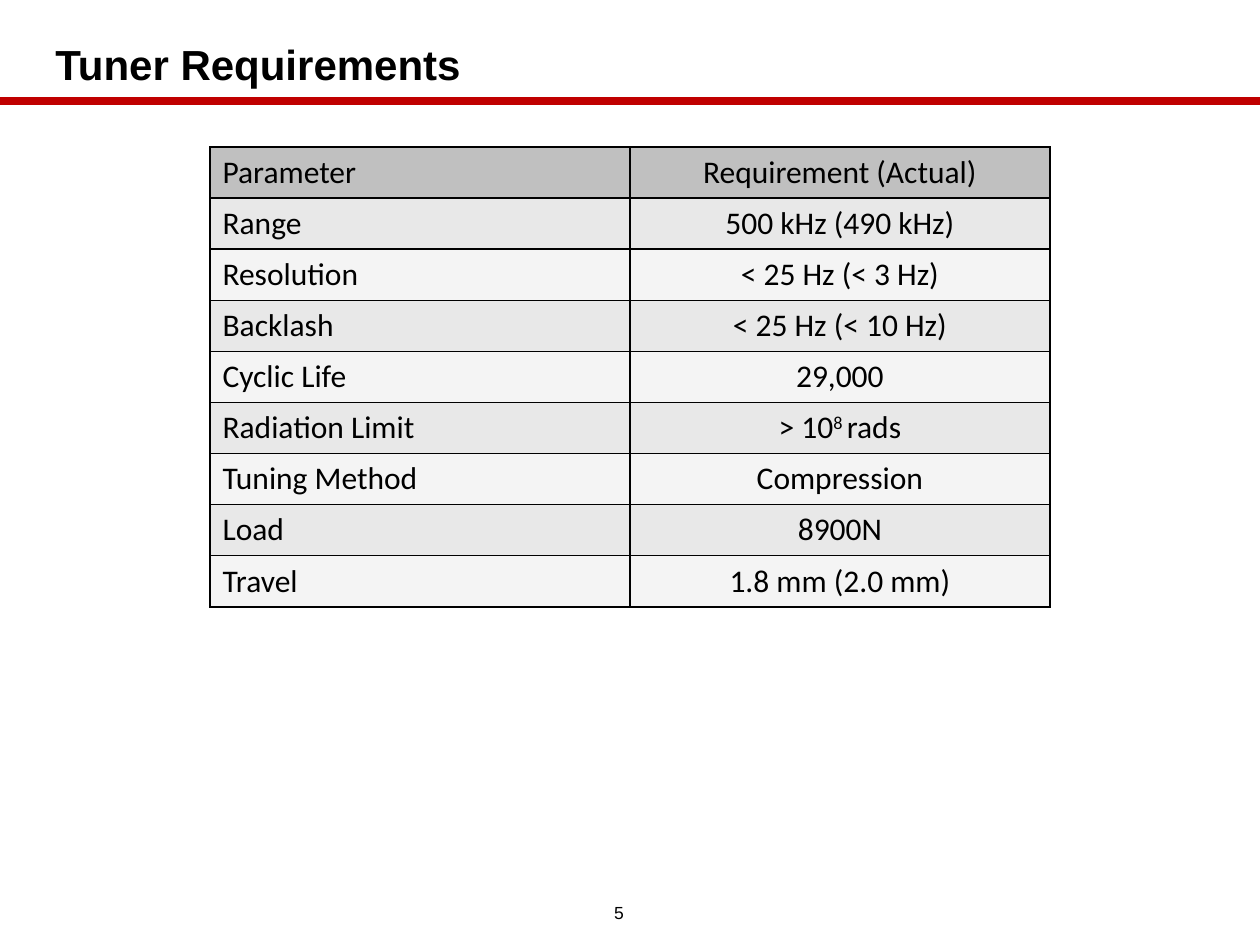
from lxml.etree import SubElement
from pptx import Presentation
from pptx.dml.color import RGBColor
from pptx.enum.shapes import MSO_CONNECTOR
from pptx.enum.text import MSO_ANCHOR, PP_ALIGN
from pptx.oxml.ns import qn
from pptx.util import Emu, Pt

PX = 914400 / 126
WIDTH, HEIGHT = 1260, 945
BLACK, RED = "000000", "C00000"
HEADER_FILL, BAND_FILLS = "C0C0C0", ("E8E8E8", "F4F4F4")
# A caret switches superscript on and off.
ROWS = [
    ("Parameter", "Requirement (Actual)"),
    ("Range", "500 kHz (490 kHz)"),
    ("Resolution", "< 25 Hz (< 3 Hz)"),
    ("Backlash", "< 25 Hz (< 10 Hz)"),
    ("Cyclic Life", "29,000"),
    ("Radiation Limit", "> 10^8 ^rads"),
    ("Tuning Method", "Compression"),
    ("Load", "8900N"),
    ("Travel", "1.8 mm (2.0 mm)"),
]


def px(n):
    return Emu(round(n * PX))


def rgb(value):
    return RGBColor.from_string(value)


def set_font(font, name, size, bold=False):
    font.name, font.size, font.bold = name, Pt(size), bold
    font.color.rgb = rgb(BLACK)


def add_label(s, box, text, size, align=PP_ALIGN.LEFT, bold=False):
    tf = s.shapes.add_textbox(*map(px, box)).text_frame
    tf.word_wrap = True
    tf.vertical_anchor = MSO_ANCHOR.MIDDLE
    tf.text = text
    p = tf.paragraphs[0]
    p.alignment = align
    set_font(p.runs[0].font, "Arial", size, bold)
    return p


def add_header(s, x, y, w, h):
    """Title with a red rule across the slide below it."""
    rule_y = y + h + 1
    rule = s.shapes.add_connector(
        MSO_CONNECTOR.STRAIGHT, px(0), px(rule_y), px(WIDTH), px(rule_y))
    rule.line.color.rgb = rgb(RED)
    rule.line.width = Pt(4.5)
    SubElement(rule._element.spPr, qn("a:effectLst"))
    title = add_label(s, (x, y, w, h), "Tuner Requirements", 24, bold=True)
    title.line_spacing = 0.9


def add_borders(cell):
    """Black 1 pt lines on all sides; they must precede the cell fill."""
    tcPr = cell._tc.get_or_add_tcPr()
    for side in ("a:lnL", "a:lnR", "a:lnT", "a:lnB"):
        ln = SubElement(tcPr, qn(side), w=str(Pt(1)))
        fill = SubElement(ln, qn("a:solidFill"))
        SubElement(fill, qn("a:srgbClr"), val=BLACK)


def fill_cell(cell, text, fill, align):
    add_borders(cell)
    cell.fill.solid()
    cell.fill.fore_color.rgb = rgb(fill)
    p = cell.text_frame.paragraphs[0]
    p.alignment = align
    for i, part in enumerate(text.split("^")):
        r = p.add_run()
        r.text = part
        set_font(r.font, "Calibri", 18)
        if i % 2:
            r._r.get_or_add_rPr().set("baseline", "30000")


def add_requirements(s, x, y, w, h):
    table = s.shapes.add_table(
        len(ROWS), 2, px(x), px(y), px(w), px(h)).table
    for column in table.columns:
        column.width = px(w / 2)
    for i, row in enumerate(ROWS):
        table.rows[i].height = px(h / len(ROWS))
        fill = BAND_FILLS[(i - 1) % 2] if i else HEADER_FILL
        for j, align in enumerate((PP_ALIGN.LEFT, PP_ALIGN.CENTER)):
            fill_cell(table.cell(i, j), row[j], fill, align)


def main():
    prs = Presentation()
    prs.slide_width, prs.slide_height = px(WIDTH), px(HEIGHT)
    s = prs.slides.add_slide(prs.slide_layouts[6])
    add_header(s, 43, 33, 1167, 67)
    add_requirements(s, 210, 147, 840, 460)
    add_label(s, (582, 891, 74, 42), "5", 10, PP_ALIGN.CENTER)
    prs.save("out.pptx")


if __name__ == "__main__":
    main()
